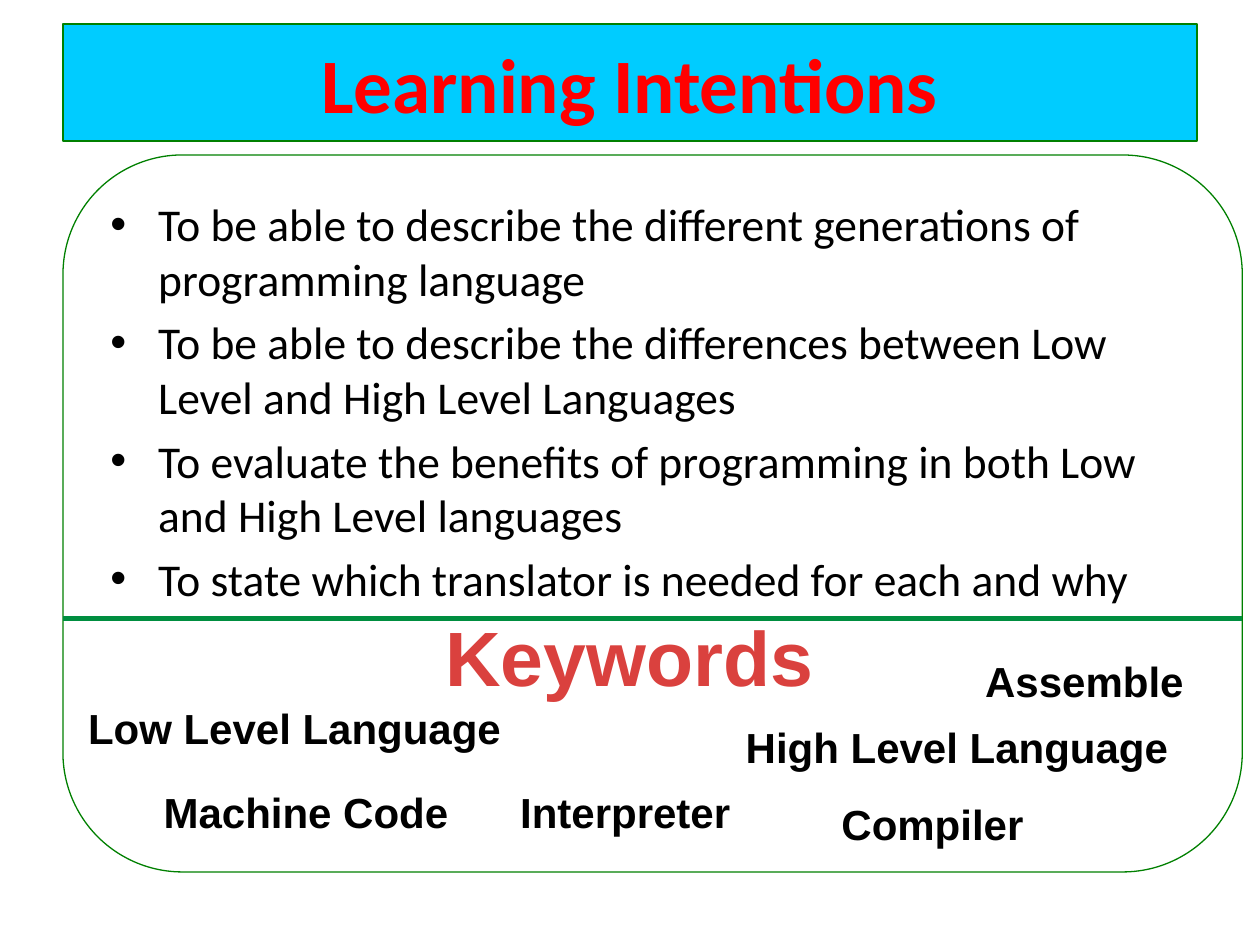
from lxml import etree
from pptx import Presentation
from pptx.dml.color import RGBColor
from pptx.enum.shapes import MSO_CONNECTOR, MSO_SHAPE
from pptx.enum.text import MSO_ANCHOR, MSO_AUTO_SIZE, PP_ALIGN
from pptx.oxml.ns import qn
from pptx.util import Inches, Pt

ROUNDED = MSO_SHAPE.ROUNDED_RECTANGLE
STRAIGHT = MSO_CONNECTOR.STRAIGHT
CENTER, LEFT = PP_ALIGN.CENTER, PP_ALIGN.LEFT
TOP, MIDDLE = MSO_ANCHOR.TOP, MSO_ANCHOR.MIDDLE
FIT_SHAPE, NO_FIT = MSO_AUTO_SIZE.SHAPE_TO_FIT_TEXT, MSO_AUTO_SIZE.NONE

COLORS = {
    "banner": "00CCFF", "title": "FF0000", "outline": "008000",
    "divider": "008E40", "heading": "DA413E", "text": "000000",
}

SLIDE_W, SLIDE_H = Inches(10), Inches(7.5)
COL, ROW = SLIDE_W / 100, SLIDE_H / 75

# Boxes are left, top, width, height in columns and rows.
TITLE_BOX = (5, 1.9, 90, 9.3)
PANEL_BOX = (5, 12.3, 93.6, 56.9)
KEYWORDS_BOX = (5, 49.1, 93.6, 20.1)

INTENTIONS = [
    "To be able to describe the different generations of programming language",
    "To be able to describe the differences between Low Level and High Level Languages",
    "To evaluate the benefits of programming in both Low and High Level languages",
    "To state which translator is needed for each and why",
]

# Left and top within the keyword region, then width.
KEYWORDS = [
    ("Low Level Language", 1, 6.2, 35.1),
    ("High Level Language", 53.2, 7.7, 35.8),
    ("Machine Code", 7, 12.8, 24.8),
    ("Compiler", 60.8, 13.8, 16.6),
    ("Interpreter", 35.3, 12.8, 18.9),
    ("Assemble", 72.2, 2.4, 17.9),
]


def color(name):
    return RGBColor.from_string(COLORS[name])


def emu(box):
    """Turn a box of columns and rows into slide lengths."""
    x, y, w, h = box
    return round(x * COL), round(y * ROW), round(w * COL), round(h * ROW)


def add_run(p, text, size, name, font="Calibri", bold=False):
    r = p.add_run()
    r.text = text
    r.font.size, r.font.name, r.font.bold = Pt(size), font, bold
    r.font.color.rgb = color(name)


def set_outline(sp):
    sp.line.color.rgb = color("outline")
    sp.line.width = Pt(0.75)


def add_bullet(p):
    pPr = p._p.get_or_add_pPr()
    pPr.set("marL", str(Inches(0.38)))
    pPr.set("indent", str(-Inches(0.38)))
    etree.SubElement(pPr, qn("a:buFont")).set("typeface", "Arial")
    etree.SubElement(pPr, qn("a:buChar")).set("char", "•")


def place_title(s, box):
    sp = s.shapes.title
    sp.left, sp.top, sp.width, sp.height = emu(box)
    sp.fill.solid()
    sp.fill.fore_color.rgb = color("banner")
    set_outline(sp)
    tf = sp.text_frame
    tf.vertical_anchor, tf.auto_size = MIDDLE, NO_FIT
    p = tf.paragraphs[0]
    p.alignment = CENTER
    add_run(p, "Learning Intentions", 44, "title", bold=True)


def add_intentions(s, box):
    sp = s.shapes.add_shape(ROUNDED, *emu(box))
    sp.shadow.inherit = False
    sp.fill.background()
    set_outline(sp)
    tf = sp.text_frame
    tf.word_wrap, tf.vertical_anchor = True, TOP
    for i, text in enumerate(INTENTIONS):
        p = tf.add_paragraph() if i else tf.paragraphs[0]
        add_bullet(p)
        p.alignment = LEFT
        p.space_before = Pt(5.2 if i else 0)
        add_run(p, text, 26, "text")


def add_label(s, box, text, size, name, alignment):
    tf = s.shapes.add_textbox(*emu(box)).text_frame
    tf.word_wrap, tf.auto_size = False, FIT_SHAPE
    p = tf.paragraphs[0]
    p.alignment = alignment
    add_run(p, text, size, name, "Arial", True)


def add_keywords(s, box):
    left, top, width, _ = box
    x, y, w, _ = emu(box)
    divider = s.shapes.add_connector(STRAIGHT, x, y, x + w, y)
    divider.line.color.rgb = color("divider")
    divider.line.width = Pt(3)
    etree.SubElement(divider._element.spPr, qn("a:effectLst"))

    heading_box = (left + 29.2, top - 1.2, 31.5, 8.4)
    add_label(s, heading_box, "Keywords", 44, "heading", CENTER)
    for text, dx, dy, label_w in KEYWORDS:
        add_label(s, (left + dx, top + dy, label_w, 5), text, 24, "text", LEFT)


def main():
    prs = Presentation()
    prs.slide_width, prs.slide_height = SLIDE_W, SLIDE_H
    s = prs.slides.add_slide(prs.slide_layouts.get_by_name("Title Only"))
    place_title(s, TITLE_BOX)
    add_intentions(s, PANEL_BOX)
    add_keywords(s, KEYWORDS_BOX)
    prs.save("out.pptx")


if __name__ == "__main__":
    main()
